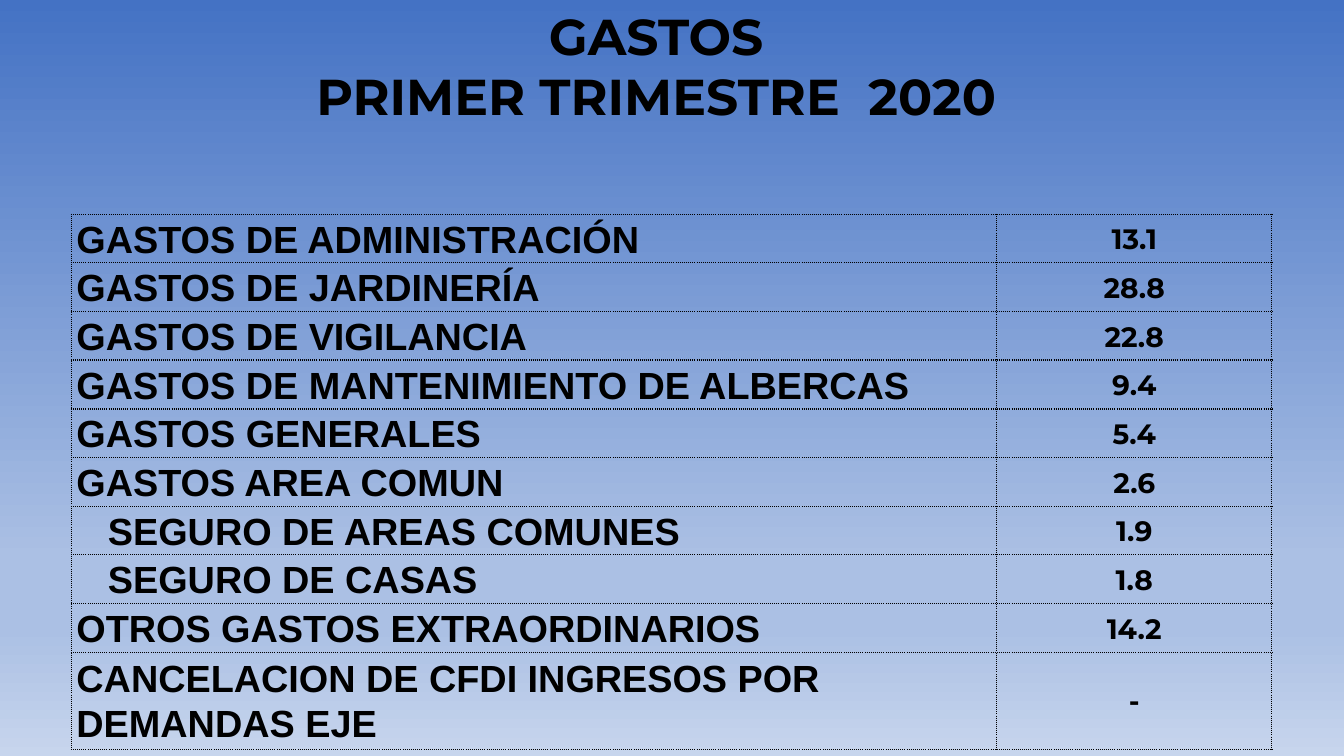
from lxml import etree
from pptx import Presentation
from pptx.dml.color import RGBColor
from pptx.enum import text
from pptx.oxml.ns import qn
from pptx.util import Pt

BLACK = "000000"
BACKGROUND_STOPS = [(0, "4472C4"), (74, "ABC0E4"), (83, "ABC0E4"), (100, "C7D5ED")]

# label, percentage, row height, left indent
EXPENSES = [
    ("GASTOS DE ADMINISTRACIÓN", "13.1", 33.6, 0),
    ("GASTOS DE JARDINERÍA", "28.8", 32.5, 0),
    ("GASTOS DE VIGILANCIA", "22.8", 32.5, 0),
    ("GASTOS DE MANTENIMIENTO DE ALBERCAS", "9.4", 35, 0),
    ("GASTOS GENERALES", "5.4", 33.6, 0),
    ("GASTOS AREA COMUN", "2.6", 33.6, 0),
    ("SEGURO DE AREAS COMUNES", "1.9", 32.1, 22.5),
    ("SEGURO DE CASAS", "1.8", 32.5, 22.5),
    ("OTROS GASTOS EXTRAORDINARIOS", "14.2", 32.5, 0),
    ("CANCELACION DE CFDI INGRESOS POR DEMANDAS EJE", "-", 65, 0),
]


def rgb(color):
    return RGBColor.from_string(color)


def add_color(parent, color):
    etree.SubElement(parent, qn("a:srgbClr"), val=color)


def set_font(p, name, size):
    p.font.name = name
    p.font.size = Pt(size)
    p.font.bold = True
    p.font.color.rgb = rgb(BLACK)


def set_background(slide, stops):
    fill = slide.background.fill
    fill.gradient()
    fill.gradient_angle = 270
    stop_list = slide.element.find(".//" + qn("a:gsLst"))
    for stop in list(stop_list):
        stop_list.remove(stop)
    for position, color in stops:
        stop = etree.SubElement(stop_list, qn("a:gs"), pos=str(position * 1000))
        add_color(stop, color)


def set_title(slide, lines):
    title = slide.shapes.title
    title.left, title.top, title.width, title.height = Pt(213), Pt(0), Pt(541.5), Pt(94.5)
    tf = title.text_frame
    tf.text = "\n".join(lines)
    tf.word_wrap = False
    tf.auto_size = text.MSO_AUTO_SIZE.SHAPE_TO_FIT_TEXT
    tf.vertical_anchor = text.MSO_ANCHOR.TOP
    for p in tf.paragraphs:
        p.alignment = text.PP_ALIGN.CENTER
        set_font(p, "Montserrat", 36)
    # The first line sits slightly left of centre
    tf.paragraphs[0]._p.get_or_add_pPr().set("marR", str(Pt(30)))


def set_borders(cell):
    tc_pr = cell._tc.get_or_add_tcPr()
    for i, side in enumerate(("a:lnL", "a:lnR", "a:lnT", "a:lnB")):
        ln = etree.Element(qn(side), w=str(Pt(1)))
        add_color(etree.SubElement(ln, qn("a:solidFill")), BLACK)
        etree.SubElement(ln, qn("a:prstDash"), val="sysDot")
        tc_pr.insert(i, ln)


def fill_cell(cell, words, font, size, align, indent=0):
    cell.margin_left = cell.margin_right = Pt(3.6)
    cell.margin_top = cell.margin_bottom = Pt(0)
    cell.vertical_anchor = text.MSO_ANCHOR.MIDDLE
    cell.fill.background()
    set_borders(cell)
    p = cell.text_frame.paragraphs[0]
    p.text = words
    p.alignment = align
    p.line_spacing = 1.07
    if indent:
        p._p.get_or_add_pPr().set("marL", str(Pt(indent)))
    set_font(p, font, size)


def add_expense_table(slide, expenses):
    height = sum(row[2] for row in expenses)
    frame = slide.shapes.add_table(len(expenses), 2, Pt(51), Pt(153), Pt(857.5), Pt(height))
    table = frame.table
    table.first_row = table.horz_banding = False
    table.columns[0].width, table.columns[1].width = Pt(661), Pt(196.5)
    for i, (label, value, row_height, indent) in enumerate(expenses):
        table.rows[i].height = Pt(row_height)
        fill_cell(table.cell(i, 0), label, "Arial", 27, text.PP_ALIGN.LEFT, indent)
        fill_cell(table.cell(i, 1), value, "Montserrat", 20, text.PP_ALIGN.CENTER)


def main():
    prs = Presentation()
    prs.slide_width, prs.slide_height = Pt(960), Pt(540)
    slide = prs.slides.add_slide(prs.slide_layouts[5])
    set_background(slide, BACKGROUND_STOPS)
    set_title(slide, ["GASTOS", "PRIMER TRIMESTRE  2020"])
    add_expense_table(slide, EXPENSES)
    prs.save("out.pptx")


if __name__ == "__main__":
    main()
